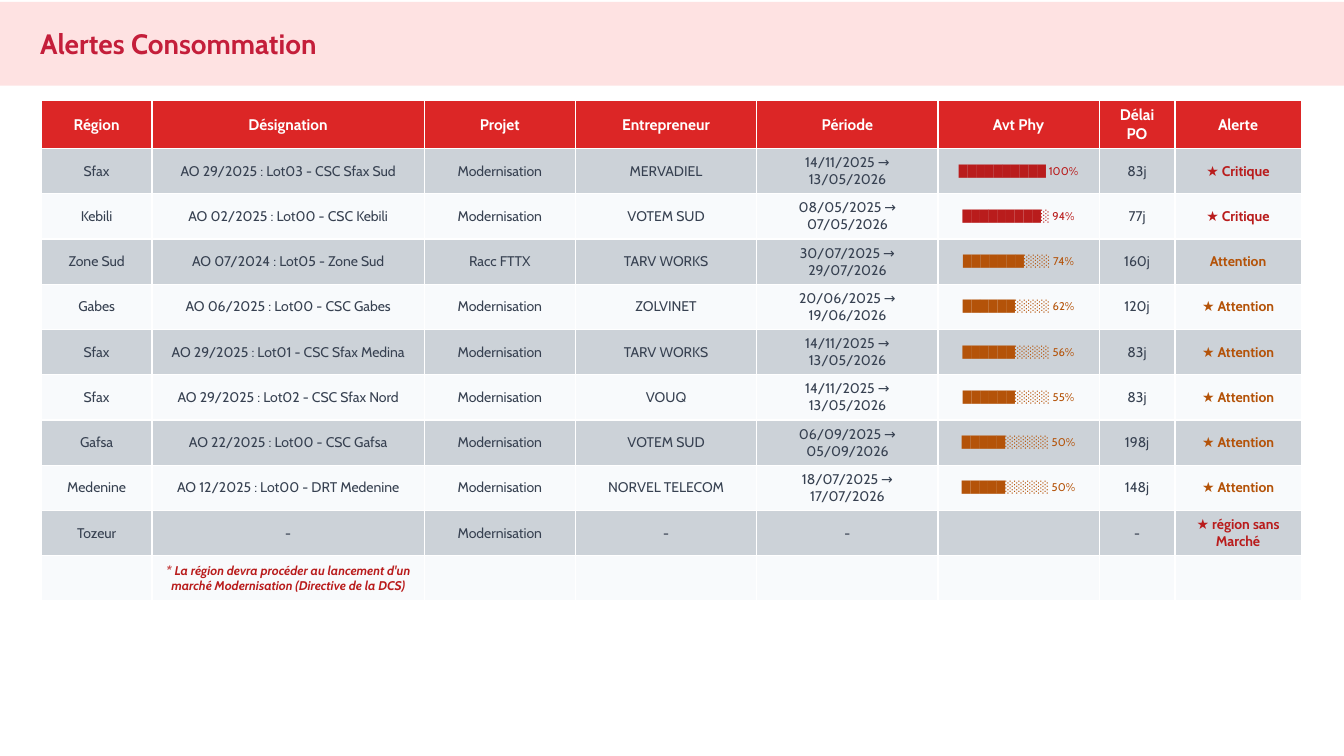
"""Build the slide of consumption alerts by region."""
from pptx import Presentation
from pptx.dml.color import RGBColor
from pptx.enum.shapes import MSO_SHAPE
from pptx.enum.text import MSO_ANCHOR, MSO_AUTO_SIZE, PP_ALIGN
from pptx.util import Cm, Pt

TITLE = "Alertes Consommation"
COLUMNS = [
    ("Région", 2.79), ("Désignation", 6.86), ("Projet", 3.81), ("Entrepreneur", 4.57),
    ("Période", 4.57), ("Avt Phy", 4.06), ("Délai PO", 1.91), ("Alerte", 3.18),
]
MARKETS = [
    ("Sfax", "AO 29/2025 : Lot03 - CSC Sfax Sud", "Modernisation", "MERVADIEL",
     "14/11/2025 → 13/05/2026", 100, "83j", "★ Critique"),
    ("Kebili", "AO 02/2025 : Lot00 - CSC Kebili", "Modernisation", "VOTEM SUD",
     "08/05/2025 → 07/05/2026", 94, "77j", "★ Critique"),
    ("Zone Sud", "AO 07/2024 : Lot05 - Zone Sud", "Racc FTTX", "TARV WORKS",
     "30/07/2025 → 29/07/2026", 74, "160j", "Attention"),
    ("Gabes", "AO 06/2025 : Lot00 - CSC Gabes", "Modernisation", "ZOLVINET",
     "20/06/2025 → 19/06/2026", 62, "120j", "★ Attention"),
    ("Sfax", "AO 29/2025 : Lot01 - CSC Sfax Medina", "Modernisation", "TARV WORKS",
     "14/11/2025 → 13/05/2026", 56, "83j", "★ Attention"),
    ("Sfax", "AO 29/2025 : Lot02 - CSC Sfax Nord", "Modernisation", "VOUQ",
     "14/11/2025 → 13/05/2026", 55, "83j", "★ Attention"),
    ("Gafsa", "AO 22/2025 : Lot00 - CSC Gafsa", "Modernisation", "VOTEM SUD",
     "06/09/2025 → 05/09/2026", 50, "198j", "★ Attention"),
    ("Medenine", "AO 12/2025 : Lot00 - DRT Medenine", "Modernisation", "NORVEL TELECOM",
     "18/07/2025 → 17/07/2026", 50, "148j", "★ Attention"),
    ("Tozeur", "-", "Modernisation", "-", "-", None, "-", "★ région sans Marché"),
]
NOTE = "* La région devra procéder au lancement d'un marché Modernisation (Directive de la DCS)"
COLORS = {
    "band": "FEE2E2", "title": "C41E3A", "header": "DC2626", "header_text": "FFFFFF",
    "odd": "CCD2D8", "even": "F8FAFC", "body": "374151",
    "critical": "B91C1C", "warning": "B45309",
}
FORMATS = {
    "title": {"size": Pt(20), "bold": True},
    "header": {"size": Pt(11), "bold": True},
    "body": {"size": Pt(10), "bold": False},
    "progress": {"size": Pt(8), "bold": False},
    "alert": {"size": Pt(10), "bold": True},
    "note": {"size": Pt(9), "bold": True, "italic": True},
}
STYLES = ["body"] * 5 + ["progress", "body", "alert"]
ROW_HEIGHT = 1.14


def color(name):
    return RGBColor.from_string(COLORS[name])


def write(frame, text, style, ink, align=PP_ALIGN.CENTER):
    frame.text = text
    paragraph = frame.paragraphs[0]
    paragraph.alignment = align
    font = paragraph.runs[0].font
    font.name = "Cabin"
    font.color.rgb = color(ink)
    for attribute, value in FORMATS[style].items():
        setattr(font, attribute, value)


def progress_bar(percent):
    if percent is None:
        return ""
    done = round(percent / 10)
    return f"{'█' * done}{'░' * (10 - done)} {percent}%"


def table_rows():
    yield [(name, "header", "header_text") for name, _ in COLUMNS]
    for market in MARKETS:
        accent = "warning" if "Attention" in market[-1] else "critical"
        texts = [*market[:5], progress_bar(market[5]), *market[6:]]
        yield [(text, style, "body" if style == "body" else accent)
               for text, style in zip(texts, STYLES)]
    yield [(NOTE if name == "Désignation" else "", "note", "critical") for name, _ in COLUMNS]


def add_alerts(slide):
    rows = list(table_rows())
    width = sum(column_width for _, column_width in COLUMNS)
    alerts = slide.shapes.add_table(
        len(rows), len(COLUMNS), Cm(1.04), Cm(2.54), Cm(width), Cm(ROW_HEIGHT * len(rows))
    ).table
    alerts.horz_banding = False
    for column, (_, column_width) in zip(alerts.columns, COLUMNS):
        column.width = Cm(column_width)
    for r, row in enumerate(rows):
        background = "header" if r == 0 else "odd" if r % 2 else "even"
        for c, (text, style, ink) in enumerate(row):
            cell = alerts.cell(r, c)
            cell.fill.solid()
            cell.fill.fore_color.rgb = color(background)
            cell.vertical_anchor = MSO_ANCHOR.MIDDLE
            if text:
                write(cell.text_frame, text, style, ink)


def add_heading(slide):
    band = slide.shapes.add_shape(MSO_SHAPE.RECTANGLE, 0, Cm(0.05), Cm(33.87), Cm(2.11))
    band.shadow.inherit = False
    band.fill.solid()
    band.fill.fore_color.rgb = color("band")
    band.line.fill.background()

    title = slide.shapes.title
    band.element.addnext(title.element)
    title.left, title.top, title.width, title.height = Cm(0.76), Cm(0.3), Cm(31.83), Cm(1.57)
    frame = title.text_frame
    frame.auto_size = MSO_AUTO_SIZE.NONE
    frame.word_wrap = True
    frame.vertical_anchor = MSO_ANCHOR.MIDDLE
    write(frame, TITLE, "title", "title", PP_ALIGN.LEFT)


def main():
    deck = Presentation()
    deck.slide_width, deck.slide_height = Cm(33.87), Cm(19.05)
    slide = deck.slides.add_slide(deck.slide_layouts.get_by_name("Title Only"))
    add_alerts(slide)
    add_heading(slide)
    deck.save("out.pptx")


if __name__ == "__main__":
    main()
